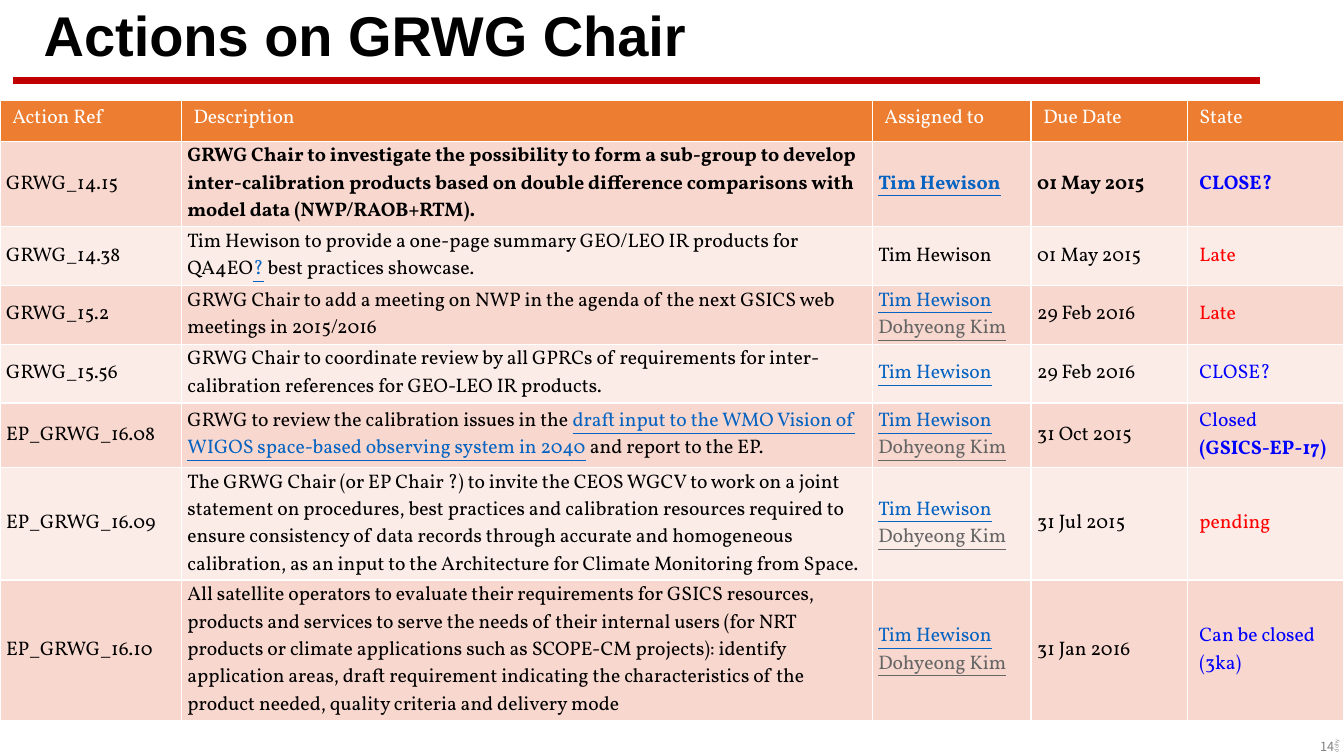
"""Build the slide listing the actions on the GRWG Chair."""
import pptx
import pptx.dml.color
import pptx.enum.shapes
import pptx.enum.text
import pptx.util
from lxml import etree

Pt = pptx.util.Pt
RGBColor = pptx.dml.color.RGBColor
ALIGN = pptx.enum.text.PP_ALIGN
ANCHOR = pptx.enum.text.MSO_ANCHOR

BLACK = RGBColor(0x00, 0x00, 0x00)
WHITE = RGBColor(0xFF, 0xFF, 0xFF)
GREY = RGBColor(0x80, 0x80, 0x80)
DARK_GREY = RGBColor(0x66, 0x66, 0x66)
LINK_BLUE = RGBColor(0x05, 0x63, 0xC1)
BLUE = RGBColor(0x00, 0x00, 0xFF)
RED = RGBColor(0xFF, 0x00, 0x00)
RULE_RED = RGBColor(0xC0, 0x00, 0x00)
ORANGE = RGBColor(0xED, 0x7D, 0x31)
BANDS = [RGBColor(0xF8, 0xD7, 0xCE), RGBColor(0xFC, 0xEC, 0xE8)]

TITLE = "Actions on GRWG Chair"
HEADINGS = ["Action Ref", "Description", "Assigned to", "Due Date", "State"]
TIM = [("Tim Hewison", {"color": LINK_BLUE, "underline": True})]
DOHYEONG = [("Dohyeong Kim", {"color": DARK_GREY, "underline": True})]
BOLD = {"bold": True}

ACTIONS = [
    ("GRWG_14.15",
     [[("GRWG Chair to investigate the possibility to form a sub-group to develop "
        "inter-calibration products based on double difference comparisons with "
        "model data (NWP/RAOB+RTM).", BOLD)]],
     [[("Tim Hewison", {"color": LINK_BLUE, "underline": True, "bold": True})]],
     [[("01 May 2015", BOLD)]],
     [[("CLOSE?", {"color": BLUE, "bold": True})]]),
    ("GRWG_14.38",
     [[("Tim Hewison to provide a one-page summary GEO/LEO IR products for QA4EO", {}),
       ("?", {"color": LINK_BLUE, "underline": True}),
       (" best practices showcase.", {})]],
     "Tim Hewison", "01 May 2015", [[("Late", {"color": RED})]]),
    ("GRWG_15.2",
     "GRWG Chair to add a meeting on NWP in the agenda of the next GSICS web "
     "meetings in 2015/2016",
     [TIM, DOHYEONG], "29 Feb 2016", [[("Late", {"color": RED})]]),
    ("GRWG_15.56",
     "GRWG Chair to coordinate review by all GPRCs of requirements for "
     "inter-calibration references for GEO-LEO IR products.",
     [TIM], "29 Feb 2016", [[("CLOSE?", {"color": BLUE})]]),
    ("EP_GRWG_16.08",
     [[("GRWG to review the calibration issues in the ", {}),
       ("draft input to the WMO Vision of WIGOS space-based observing system in 2040",
        {"color": LINK_BLUE, "underline": True}),
       (" and report to the EP.", {})]],
     [TIM, DOHYEONG], "31 Oct 2015",
     [[("Closed", {"color": BLUE})],
      [("(GSICS-EP-17)", {"color": BLUE, "bold": True})]]),
    ("EP_GRWG_16.09",
     "The GRWG Chair (or EP Chair ?) to invite the CEOS WGCV to work on a joint "
     "statement on procedures, best practices and calibration resources required to "
     "ensure consistency of data records through accurate and homogeneous "
     "calibration, as an input to the Architecture for Climate Monitoring from Space.",
     [TIM, DOHYEONG], "31 Jul 2015", [[("pending", {"color": RED})]]),
    ("EP_GRWG_16.10",
     "All satellite operators to evaluate their requirements for GSICS resources, "
     "products and services to serve the needs of their internal users (for NRT "
     "products or climate applications such as SCOPE-CM projects): identify "
     "application areas, draft requirement indicating the characteristics of the "
     "product needed, quality criteria and delivery mode",
     [TIM, DOHYEONG], "31 Jan 2016",
     [[("Can be closed", {"color": BLUE})], [("(3ka)", {"color": BLUE})]]),
]

SLIDE_WIDTH, SLIDE_HEIGHT = 960, 540
COLUMN_WIDTHS = [129.5, 493.5, 113.5, 111.5, 112]
ROW_HEIGHTS = [29.5, 61, 42, 42, 42, 46, 80.5, 100.5]
TABLE_TOP = 71.5
WIDE_MARGINS = (8.8, 3.6)
NARROW_MARGINS = (4.4, 1.4)
STATE_COLUMN = len(HEADINGS) - 1


def write(frame, text, size=14, font="Vollkorn", color=BLACK, bold=False,
          align=ALIGN.LEFT, spacing=None):
    """Fill a text frame with a string or with paragraphs of (text, format) spans."""
    lines = [[(text, {})]] if isinstance(text, str) else text
    for index, line in enumerate(lines):
        para = frame.add_paragraph() if index else frame.paragraphs[0]
        para.alignment = align
        if spacing:
            para.line_spacing = spacing
        for words, style in line:
            span = para.add_run()
            span.text = words
            span.font.name = font
            span.font.size = Pt(size)
            span.font.bold = style.get("bold", bold)
            span.font.underline = style.get("underline", False)
            span.font.color.rgb = style.get("color", color)


def add_label(page, text, left, top, width, height, rotation=0, **style):
    box = page.shapes.add_textbox(Pt(left), Pt(top), Pt(width), Pt(height))
    box.rotation = rotation
    box.text_frame.word_wrap = True
    write(box.text_frame, text, font="Noto Sans CJK KR", color=GREY, **style)


def add_title(page):
    title = page.shapes.title
    title.left, title.top, title.width, title.height = Pt(24), Pt(5.5), Pt(828), Pt(43.2)
    title.text_frame.vertical_anchor = ANCHOR.MIDDLE
    title.text_frame.auto_size = pptx.enum.text.MSO_AUTO_SIZE.NONE
    write(title.text_frame, TITLE, size=40, font="Arial", bold=True, spacing=0.9)


def add_rule(page):
    rule = page.shapes.add_connector(
        pptx.enum.shapes.MSO_CONNECTOR.STRAIGHT, Pt(9.4), Pt(57.6), Pt(900), Pt(57.6))
    rule.line.color.rgb = RULE_RED
    rule.line.width = Pt(4.5)
    etree.SubElement(rule._element.spPr, pptx.oxml.ns.qn("a:effectLst"))


def add_actions(page):
    rows = [HEADINGS] + ACTIONS
    table = page.shapes.add_table(
        len(rows), len(HEADINGS), Pt(0), Pt(TABLE_TOP),
        Pt(sum(COLUMN_WIDTHS)), Pt(sum(ROW_HEIGHTS))).table
    for column, width in zip(table.columns, COLUMN_WIDTHS):
        column.width = Pt(width)
    for row_index, (row, height) in enumerate(zip(rows, ROW_HEIGHTS)):
        table.rows[row_index].height = Pt(height)
        heading = row_index == 0
        for column_index, text in enumerate(row):
            cell = table.cell(row_index, column_index)
            wide = heading or column_index == STATE_COLUMN
            side, edge = WIDE_MARGINS if wide else NARROW_MARGINS
            cell.margin_left = cell.margin_right = Pt(side)
            cell.margin_top = cell.margin_bottom = Pt(edge)
            cell.vertical_anchor = ANCHOR.TOP if heading else ANCHOR.MIDDLE
            cell.fill.solid()
            cell.fill.fore_color.rgb = ORANGE if heading else BANDS[(row_index - 1) % 2]
            write(cell.text_frame, text, color=WHITE if heading else BLACK)


def main():
    deck = pptx.Presentation()
    deck.slide_width, deck.slide_height = Pt(SLIDE_WIDTH), Pt(SLIDE_HEIGHT)
    page = deck.slides.add_slide(deck.slide_layouts[5])
    add_rule(page)
    add_label(page, "14", 878, 524, 82, 18, size=9, align=ALIGN.RIGHT)
    add_label(page, "dohy", 913.5, 497.5, 82, 11.5, rotation=270, size=3.8)
    add_title(page)
    add_actions(page)
    deck.save("out.pptx")


if __name__ == "__main__":
    main()
